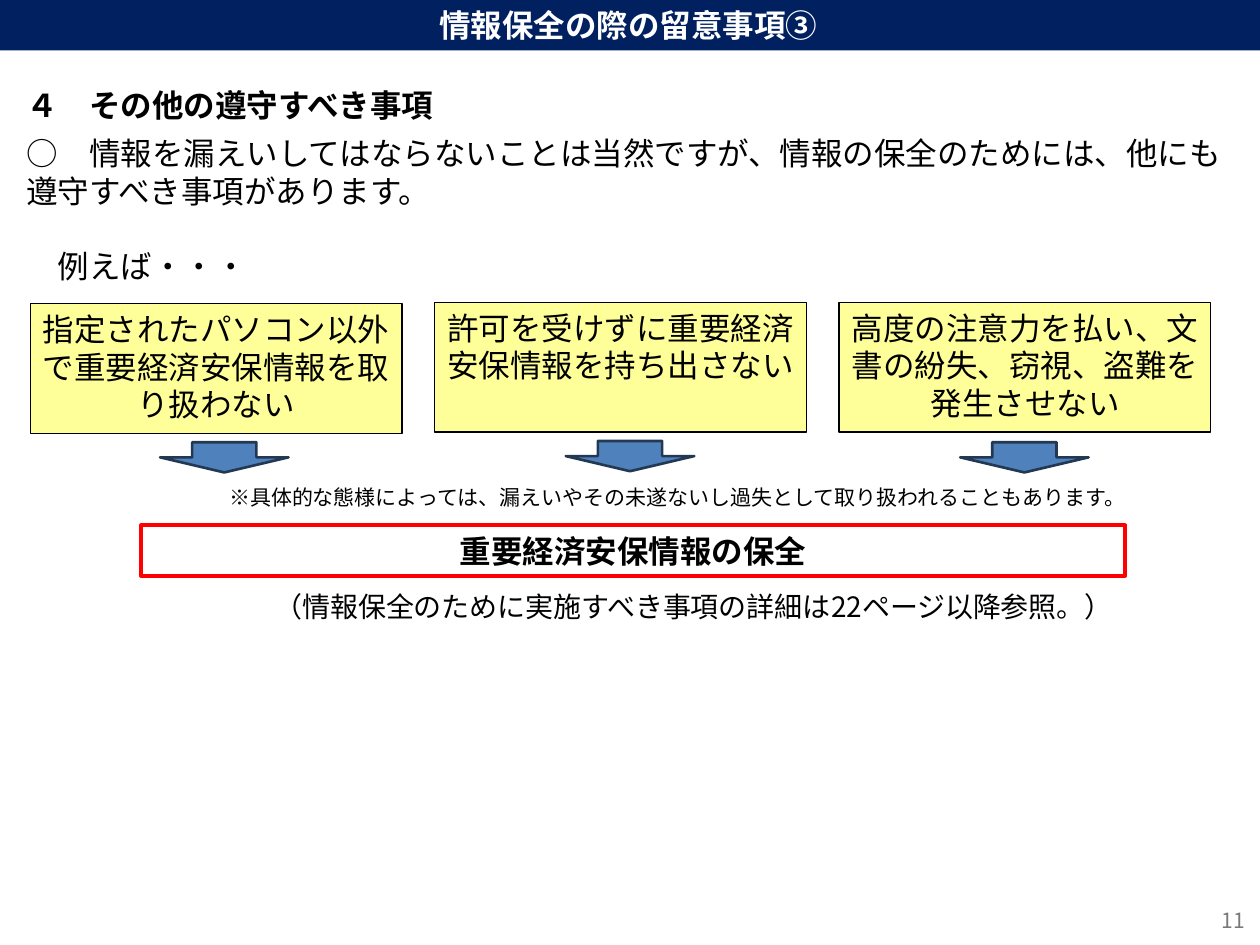
"""Build the slide on points to observe when safeguarding information."""
from dataclasses import dataclass
from typing import Optional

from lxml.etree import SubElement
from pptx import Presentation
from pptx.dml.color import RGBColor as RGB
from pptx.enum.shapes import MSO_SHAPE as SHAPE
from pptx.enum.text import MSO_ANCHOR as ANCHOR, PP_ALIGN as ALIGN
from pptx.oxml.ns import qn
from pptx.util import Inches, Pt


@dataclass(frozen=True)
class Theme:
    font: str = "Noto Sans CJK JP"
    navy: str = "002060"
    white: str = "FFFFFF"
    black: str = "000000"
    yellow: str = "FFFF99"
    blue: str = "4F81BD"
    blue_edge: str = "233953"
    red: str = "FF0000"
    grey: str = "797979"
    body: int = 18
    reference: int = 16
    small: int = 12
    leading: float = 1.2


@dataclass(frozen=True)
class Box:
    left: float
    top: float
    width: float
    height: float

    def lengths(self) -> list:
        return [Inches(v) for v in (self.left, self.top, self.width, self.height)]


@dataclass(frozen=True)
class Para:
    text: str
    size: int
    color: str
    bold: bool = False
    align: ALIGN = ALIGN.LEFT
    before: float = 0
    after: float = 0


@dataclass(frozen=True)
class Example:
    text: str
    top: float
    arrow_left: float
    arrow_top: float


T = Theme()
EXAMPLES = [
    Example("指定されたパソコン以外で重要経済安保情報を取り扱わない", 2.41, 1.27, 3.51),
    Example("許可を受けずに重要経済安保情報を持ち出さない", 2.4, 4.49, 3.5),
    Example("高度の注意力を払い、文書の紛失、窃視、盗難を 発生させない", 2.4, 7.62, 3.51),
]
EXAMPLE_LEFT, EXAMPLE_PITCH = 0.24, 3.21


def write(sp, paras: list[Para], anchor: ANCHOR = ANCHOR.TOP) -> None:
    tf = sp.text_frame
    frame_format = {"word_wrap": True, "vertical_anchor": anchor,
                    "margin_left": Inches(0.1), "margin_right": Inches(0.1),
                    "margin_top": Inches(0.05), "margin_bottom": Inches(0.05)}
    for name, value in frame_format.items():
        setattr(tf, name, value)
    for i, para in enumerate(paras):
        p = tf.add_paragraph() if i else tf.paragraphs[0]
        para_format = {"alignment": para.align, "line_spacing": Pt(para.size * T.leading),
                       "space_before": Pt(para.before), "space_after": Pt(para.after)}
        for name, value in para_format.items():
            setattr(p, name, value)
        r = p.add_run()
        r.text = para.text
        for name, value in {"size": Pt(para.size), "bold": para.bold, "name": T.font}.items():
            setattr(r.font, name, value)
        r.font.color.rgb = RGB.from_string(para.color)
        SubElement(r.font._element, qn("a:ea")).set("typeface", T.font)


def add_text(s, box: Box, paras: list[Para], anchor: ANCHOR = ANCHOR.TOP) -> None:
    write(s.shapes.add_textbox(*box.lengths()), paras, anchor)


def add_block(s, box: Box, fill: Optional[str] = None, line: Optional[str] = None,
              weight: float = 0.75, para: Optional[Para] = None,
              kind: SHAPE = SHAPE.RECTANGLE) -> None:
    sp = s.shapes.add_shape(kind, *box.lengths())
    sp.shadow.inherit = False
    if fill:
        sp.fill.solid()
        sp.fill.fore_color.rgb = RGB.from_string(fill)
    else:
        sp.fill.background()
    if line:
        sp.line.color.rgb = RGB.from_string(line)
        sp.line.width = Pt(weight)
    else:
        sp.line.fill.background()
    if para:
        write(sp, [para])


def add_example(s, index: int, example: Example) -> None:
    box = Box(EXAMPLE_LEFT + index * EXAMPLE_PITCH, example.top, 2.95, 1.03)
    add_block(s, box, T.yellow, T.black,
              para=Para(example.text, T.body, T.black, align=ALIGN.CENTER))
    add_block(s, Box(example.arrow_left, example.arrow_top, 1.02, 0.24),
              T.blue, T.blue_edge, 1.5, kind=SHAPE.DOWN_ARROW)


def main() -> None:
    prs = Presentation()
    prs.slide_width, prs.slide_height = Inches(10), Inches(7.5)
    s = prs.slides.add_slide(prs.slide_layouts[6])

    add_block(s, Box(-0.03, 0, 10.03, 0.4), T.navy,
              para=Para("情報保全の際の留意事項③", T.body, T.white, True, ALIGN.CENTER))
    add_text(s, Box(0.11, 0.63, 9.77, 1.7), [
        Para("４　その他の遵守すべき事項", T.body, T.black, True, after=6),
        Para("○　情報を漏えいしてはならないことは当然ですが、情報の保全のためには、"
             "他にも遵守すべき事項があります。", T.body, T.black),
        Para("　例えば・・・", T.body, T.black, before=T.body * T.leading),
    ])
    for index, example in enumerate(EXAMPLES):
        add_example(s, index, example)
    add_text(s, Box(1.72, 3.8, 7.2, 0.3), [
        Para("※具体的な態様によっては、漏えいやその未遂ないし過失として"
             "取り扱われることもあります。", T.small, T.black)])
    add_block(s, Box(1.12, 4.17, 7.81, 0.4), line=T.red, weight=2.25,
              para=Para("重要経済安保情報の保全", T.body, T.black, True, ALIGN.CENTER))
    add_text(s, Box(2.08, 4.63, 7.81, 0.37), [
        Para("（情報保全のために実施すべき事項の詳細は22ページ以降参照。）",
             T.reference, T.black)])
    add_text(s, Box(7.73, 7.1, 2.25, 0.4),
             [Para("11", T.small, T.grey, align=ALIGN.RIGHT)], ANCHOR.MIDDLE)
    prs.save("out.pptx")


if __name__ == "__main__":
    main()
